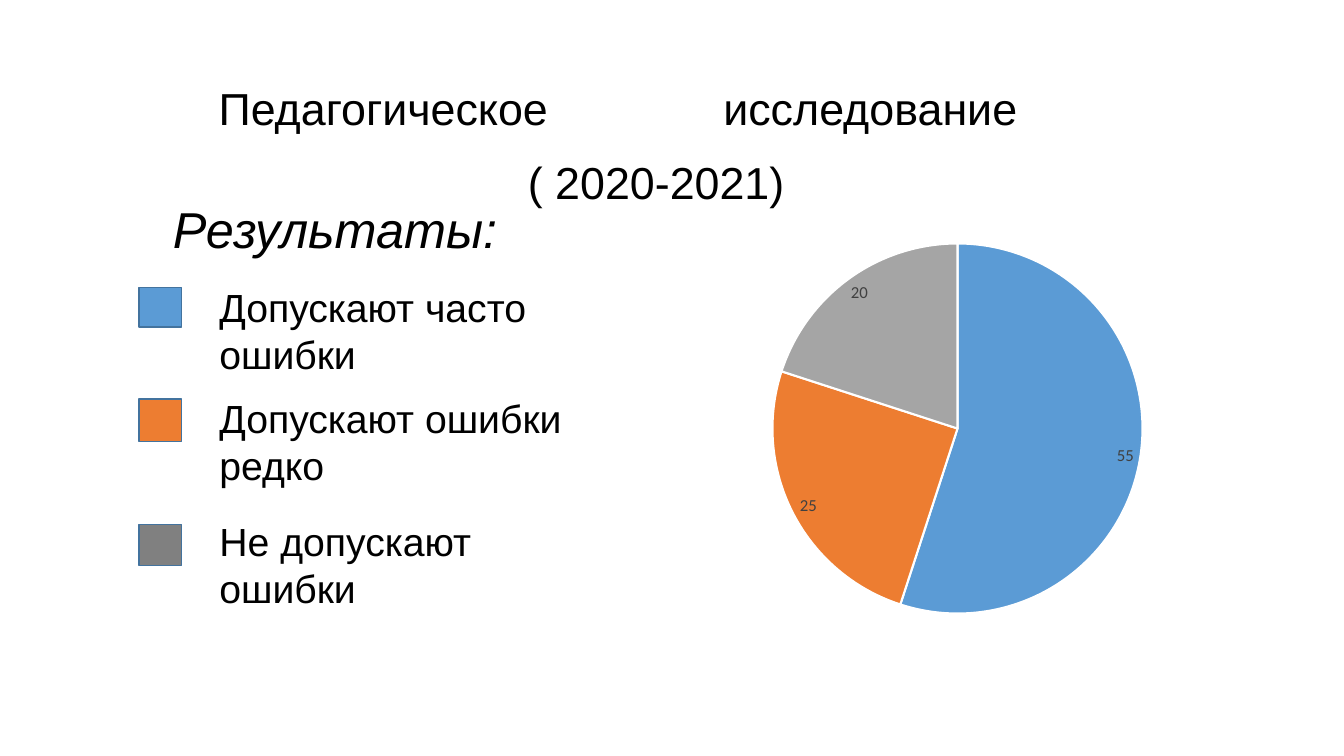
from lxml import etree
from pptx import Presentation
from pptx.chart.data import CategoryChartData
from pptx.dml.color import RGBColor
from pptx.enum import chart as charts, shapes, text
from pptx.oxml import parse_xml
from pptx.oxml.ns import nsdecls, qn
from pptx.util import Cm, Pt

BLACK = "000000"
OUTLINE = "43739E"
BLUE, ORANGE, GRAY, SILVER = "5B9BD5", "ED7D31", "808080", "A5A5A5"


def color(value):
    return RGBColor.from_string(value)


def set_font(font, size, name="Arial", value=BLACK):
    font.name = name
    font.size = Pt(size)
    font.color.rgb = color(value)


def add_text(slide, words, left, top, width, height, size, italic=None, align=None):
    box = slide.shapes.add_textbox(Cm(left), Cm(top), Cm(width), Cm(height))
    box.text_frame.word_wrap = True
    paragraph = box.text_frame.paragraphs[0]
    paragraph.text = words
    paragraph.alignment = align
    set_font(paragraph.font, size)
    paragraph.font.italic = italic


def add_swatch(slide, top, height, fill):
    swatch = slide.shapes.add_shape(
        shapes.MSO_SHAPE.RECTANGLE, Cm(3.5), Cm(top), Cm(1.07), Cm(height))
    swatch.shadow.inherit = False
    swatch.fill.solid()
    swatch.fill.fore_color.rgb = color(fill)
    swatch.line.color.rgb = color(OUTLINE)
    swatch.line.width = Pt(1)


def set_plot_area(chart, x, y, width, height):
    """Fix the inner plot area, in fractions of the chart frame."""
    plot_area = chart._chartSpace.chart.plotArea
    for layout in plot_area.findall(qn("c:layout")):
        plot_area.remove(layout)
    layout = parse_xml(f"<c:layout {nsdecls('c')}><c:manualLayout/></c:layout>")
    settings = {"layoutTarget": "inner", "xMode": "edge", "yMode": "edge",
                "x": x, "y": y, "w": width, "h": height}
    for tag, value in settings.items():
        etree.SubElement(layout[0], qn(f"c:{tag}")).set("val", str(value))
    plot_area.insert(0, layout)


def add_results_pie(slide, values, fills):
    data = CategoryChartData()
    data.categories = [str(number) for number in range(1, len(values) + 1)]
    data.add_series("Series 1", values)
    chart = slide.shapes.add_chart(
        charts.XL_CHART_TYPE.PIE, Cm(17.17), Cm(5.77), Cm(13.92), Cm(10.06), data).chart
    chart.has_legend = False
    chart.has_title = False
    set_font(chart.font, 10, "Calibri")
    set_plot_area(chart, 0.165, 0.035, 0.67, 0.93)

    plot = chart.plots[0]
    plot.vary_by_categories = True
    for index, fill in enumerate(fills):
        point = plot.series[0].points[index]
        point.format.fill.solid()
        point.format.fill.fore_color.rgb = color(fill)
        point.format.line.color.rgb = color("FFFFFF")
        point.format.line.width = Pt(1.5)
    labels = plot.series[0].data_labels
    labels.show_value = True
    labels.show_percentage = False
    labels.position = charts.XL_LABEL_POSITION.BEST_FIT
    set_font(labels.font, 12, "Calibri", "404040")


def main():
    presentation = Presentation()
    presentation.slide_width, presentation.slide_height = Cm(33.87), Cm(19.05)
    slide = presentation.slides.add_slide(presentation.slide_layouts[6])

    add_text(slide, "Педагогическое", 5.26, 1.9, 10.4, 1.62, 32)
    add_text(slide, "исследование", 17.98, 1.9, 12.27, 1.62, 32)
    add_text(slide, "( 2020-2021)", 5.77, 3.78, 21.54, 1.62, 32,
             align=text.PP_ALIGN.CENTER)
    add_text(slide, "Результаты:", 4.11, 4.88, 11.89, 1.8, 36, italic=True)

    legend = [
        ("Допускают часто ошибки", BLUE, 7.24, 1, 7.01, 11.3),
        ("Допускают ошибки редко", ORANGE, 10.06, 1.07, 9.8, 10.36),
        ("Не допускают ошибки", GRAY, 13.21, 1.04, 12.9, 8.74),
    ]
    for words, fill, swatch_top, swatch_height, text_top, text_width in legend:
        add_swatch(slide, swatch_top, swatch_height, fill)
        add_text(slide, words, 5.28, text_top, text_width, 2.64, 28)

    add_results_pie(slide, [55, 25, 20], [BLUE, ORANGE, SILVER])
    presentation.save("out.pptx")


if __name__ == "__main__":
    main()
